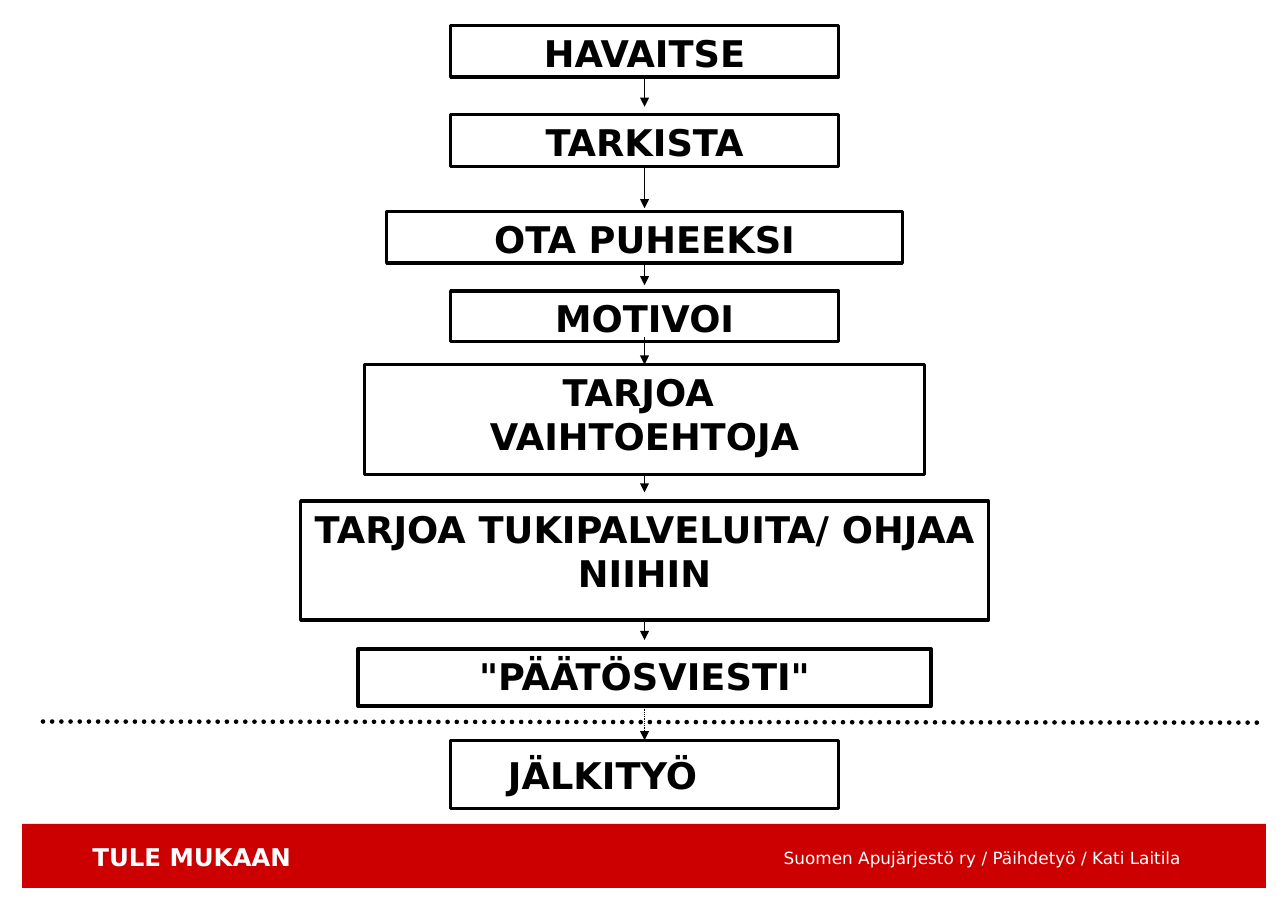
from lxml import etree
from pptx import Presentation, util as u
from pptx.dml.color import RGBColor
from pptx.enum import dml, shapes, text
from pptx.oxml import ns

PX = 9144  # 100 px to the inch
BLACK = RGBColor(0x00, 0x00, 0x00)
WHITE = RGBColor(0xFF, 0xFF, 0xFF)
RED = RGBColor(0xCC, 0x00, 0x00)
FONT = "DejaVu Sans"
CENTER = 585  # axis shared by all steps

# Wording, top, width, height
STEPS = [
    ("HAVAITSE", 23, 352, 47),
    ("TARKISTA", 104, 352, 47),
    ("OTA PUHEEKSI", 192, 468, 47),
    ("MOTIVOI", 264, 352, 46),
    ("TARJOA \nVAIHTOEHTOJA", 331, 508, 100),
    ("TARJOA TUKIPALVELUITA/ OHJAA NIIHIN", 455, 624, 108),
    ('"PÄÄTÖSVIESTI"', 589, 520, 52),
    ("JÄLKITYÖ", 672, 352, 62),
]
# Start and end of the arrow below each step
ARROWS = [(70, 97), (151, 189), (239, 259), (306, 331),
          (431, 447), (563, 581), (644, 672)]


def px(*lengths):
    return [u.Emu(length * PX) for length in lengths]


def write(shape, words, size, color, align, bold=True):
    frame = shape.text_frame
    frame.text = words
    for para in frame.paragraphs:
        para.alignment = align
        for span in para.runs:
            span.font.name = FONT
            span.font.size = u.Pt(size)
            span.font.bold = bold
            span.font.color.rgb = color


def add_rectangle(page, left, top, width, height, fill):
    box = page.shapes.add_shape(shapes.MSO_SHAPE.RECTANGLE,
                                *px(left, top, width, height))
    box.shadow.inherit = False
    box.fill.solid()
    box.fill.fore_color.rgb = fill
    return box


def add_step(page, words, top, width, height):
    box = add_rectangle(page, CENTER - width // 2, top, width, height, WHITE)
    box.line.color.rgb = BLACK
    box.line.width = u.Pt(2.25)
    box.text_frame.vertical_anchor = text.MSO_ANCHOR.TOP
    write(box, words, 24, BLACK, text.PP_ALIGN.CENTER)
    return box


def add_line(page, start, end, weight, dotted=False):
    line = page.shapes.add_connector(shapes.MSO_CONNECTOR.STRAIGHT,
                                     *px(*start, *end))
    line.line.color.rgb = BLACK
    line.line.width = u.Pt(weight)
    if dotted:
        line.line.dash_style = dml.MSO_LINE.ROUND_DOT
    etree.SubElement(line._element.spPr, ns.qn("a:effectLst"))
    return line


def add_arrow(page, start, end, upper, lower, dotted):
    arrow = add_line(page, (CENTER, start), (CENTER, end), 0.75, dotted)
    outline = arrow._element.spPr.find(ns.qn("a:ln"))
    etree.SubElement(outline, ns.qn("a:tailEnd"), type="triangle")
    # Join only the ends that touch a step
    if start * PX == upper.top + upper.height:
        arrow.begin_connect(upper, 2)
    if end * PX == lower.top:
        arrow.end_connect(lower, 0)


def add_label(page, area, words, size, align, bold):
    box = page.shapes.add_textbox(*px(*area))
    box.text_frame.word_wrap = False
    write(box, words, size, WHITE, align, bold)
    return box


def main():
    deck = Presentation()
    deck.slide_width, deck.slide_height = px(1169, 827)
    page = deck.slides.add_slide(deck.slide_layouts[6])

    # Footer band
    band = add_rectangle(page, 20, 748, 1129, 58, RED)
    band.line.fill.background()
    slogan = add_label(page, (73, 758, 204, 38), "TULE MUKAAN", 16,
                       text.PP_ALIGN.LEFT, True)
    slogan.text_frame.margin_left, slogan.text_frame.margin_top = px(11, 6)
    add_label(page, (688, 765, 394, 29),
              "Suomen Apujärjestö ry / Päihdetyö / Kati Laitila", 11,
              text.PP_ALIGN.RIGHT, False)

    # Steps; the last one is set from the left
    boxes = [add_step(page, *step) for step in STEPS]
    follow_up = boxes[-1].text_frame
    follow_up.vertical_anchor = text.MSO_ANCHOR.MIDDLE
    follow_up.margin_left = px(52)[0]
    follow_up.paragraphs[0].alignment = text.PP_ALIGN.LEFT

    # Dotted divider
    divider = add_line(page, (39, 655), (1143, 656), 3, dotted=True)
    divider._element.spPr.find(ns.qn("a:ln")).set("cap", "rnd")

    # Arrows between the steps; the one across the divider is dotted
    for (start, end), upper, lower in zip(ARROWS, boxes, boxes[1:]):
        add_arrow(page, start, end, upper, lower, lower is boxes[-1])

    deck.save("out.pptx")


if __name__ == "__main__":
    main()
